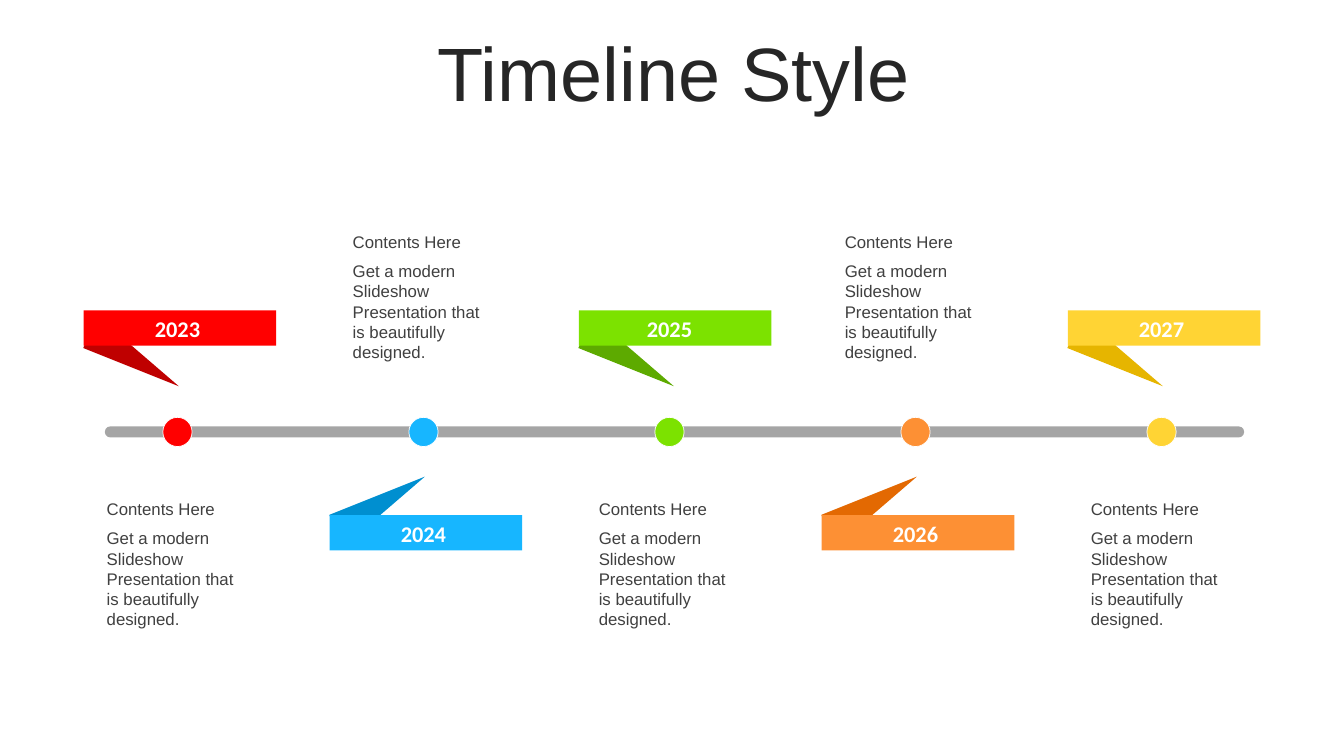
from dataclasses import dataclass

from lxml.etree import SubElement
from pptx import Presentation
from pptx.dml.color import RGBColor
from pptx.enum.shapes import MSO_SHAPE as Kind
from pptx.enum.text import MSO_ANCHOR as Anchor, MSO_AUTO_SIZE as Fit, PP_ALIGN as Align
from pptx.oxml.ns import qn
from pptx.shapes.autoshape import Shape
from pptx.util import Inches, Pt

CELL = 0.1  # side of a grid cell in inches
START, STEP = 17.6, 24.4  # columns of the first dot and between dots
AXIS = 42.85  # row of the time axis
DOT = 2.9
BAND_W, BAND_H = 19.1, 3.5
FOLD_W, FOLD_H, TILT = 3.5, 10.2, 111.8
HEAD = "Contents Here"
BODY = "Get a modern Slideshow Presentation that is beautifully designed."


@dataclass(frozen=True)
class Year:
    name: str
    fill: str
    shade: str
    nudge: float = 0  # columns the ribbon moves right


YEARS = [
    Year("2023", "FF0000", "BF0000"),
    Year("2024", "17B6FF", "008FD0"),
    Year("2025", "7CE200", "5DAA00", 0.3),
    Year("2026", "FD9034", "E36902"),
    Year("2027", "FFD434", "E6B500"),
]

deck = Presentation()
deck.slide_width, deck.slide_height = Inches(13.33), Inches(7.5)
slide = deck.slides.add_slide(deck.slide_layouts[6])


def paint(color: str) -> RGBColor:
    return RGBColor.from_string(color)


def place(col: float, row: float, wide: float, high: float) -> list[int]:
    """Turn grid columns and rows into slide lengths."""
    return [Inches(n * CELL) for n in (col, row, wide, high)]


def form(kind: Kind, col: float, row: float, wide: float, high: float,
         fill: str, edge: str = "") -> Shape:
    shape = slide.shapes.add_shape(kind, *place(col, row, wide, high))
    shape.shadow.inherit = False
    shape.fill.solid()
    shape.fill.fore_color.rgb = paint(fill)
    if edge:
        shape.line.color.rgb = paint(edge)
        shape.line.width = Pt(0.5)
    else:
        shape.line.fill.background()
    return shape


def label(text: str, col: float, row: float, wide: float, high: float,
          size: int, color: str, face: str = "Arial", bold: bool = False,
          align: Align = Align.LEFT) -> Shape:
    box = slide.shapes.add_textbox(*place(col, row, wide, high))
    frame = box.text_frame
    frame.word_wrap = True
    frame.auto_size = Fit.SHAPE_TO_FIT_TEXT
    para = frame.paragraphs[0]
    para.text, para.alignment = text, align
    font = para.font
    font.name, font.size, font.bold = face, Pt(size), bold
    font.color.rgb = paint(color)
    return box


def title() -> None:
    frame = label("Timeline Style", 3.5, 3.7, 126.6, 7.9, 54, "262626",
                  align=Align.CENTER).text_frame
    frame.auto_size = Fit.NONE
    frame.vertical_anchor = Anchor.MIDDLE
    frame.paragraphs[0].line_spacing = 0.9
    frame.paragraphs[0].space_before = Pt(10)


def axis() -> None:
    bar = form(Kind.ROUNDED_RECTANGLE, 10.4, AXIS - 0.55, 113, 1.1, "808080")
    bar.adjustments[0] = 0.5
    tone = bar.fill._xPr.find(qn("a:solidFill"))[0]
    SubElement(tone, qn("a:alpha"), val="70000")


def ribbon(year: Year, mid: float, below: bool) -> None:
    """Draw the folded tail, then the band over it and its year."""
    left = mid - 9.3 + year.nudge
    top = 51.1 if below else 30.8
    tail = form(Kind.RIGHT_TRIANGLE, left + 3.6, 45.7 if below else 29.7,
                FOLD_W, FOLD_H, year.shade)
    tail.rotation = 360 - TILT if below else TILT
    turn = tail._element.spPr.xfrm
    turn.set("flipH", "1")
    if below:
        turn.set("flipV", "1")
    form(Kind.RECTANGLE, left, top, BAND_W, BAND_H, year.fill)
    label(year.name, mid - 6.9, top, 13.8, 3.7, 16, "FFFFFF", "Calibri", True,
          Align.CENTER)


def main() -> None:
    title()
    axis()
    for i, year in enumerate(YEARS):
        mid, below = START + i * STEP, i % 2 == 1
        form(Kind.OVAL, mid - DOT / 2, AXIS - DOT / 2, DOT, DOT, year.fill, "FFFFFF")
        ribbon(year, mid, below)
        top = 22.5 if below else 49
        label(HEAD, mid - 8, top, 16.2, 3, 12, "404040")
        label(BODY, mid - 8, top + 2.9, 16.2, 11.1, 12, "404040")
    deck.save("out.pptx")


if __name__ == "__main__":
    main()
